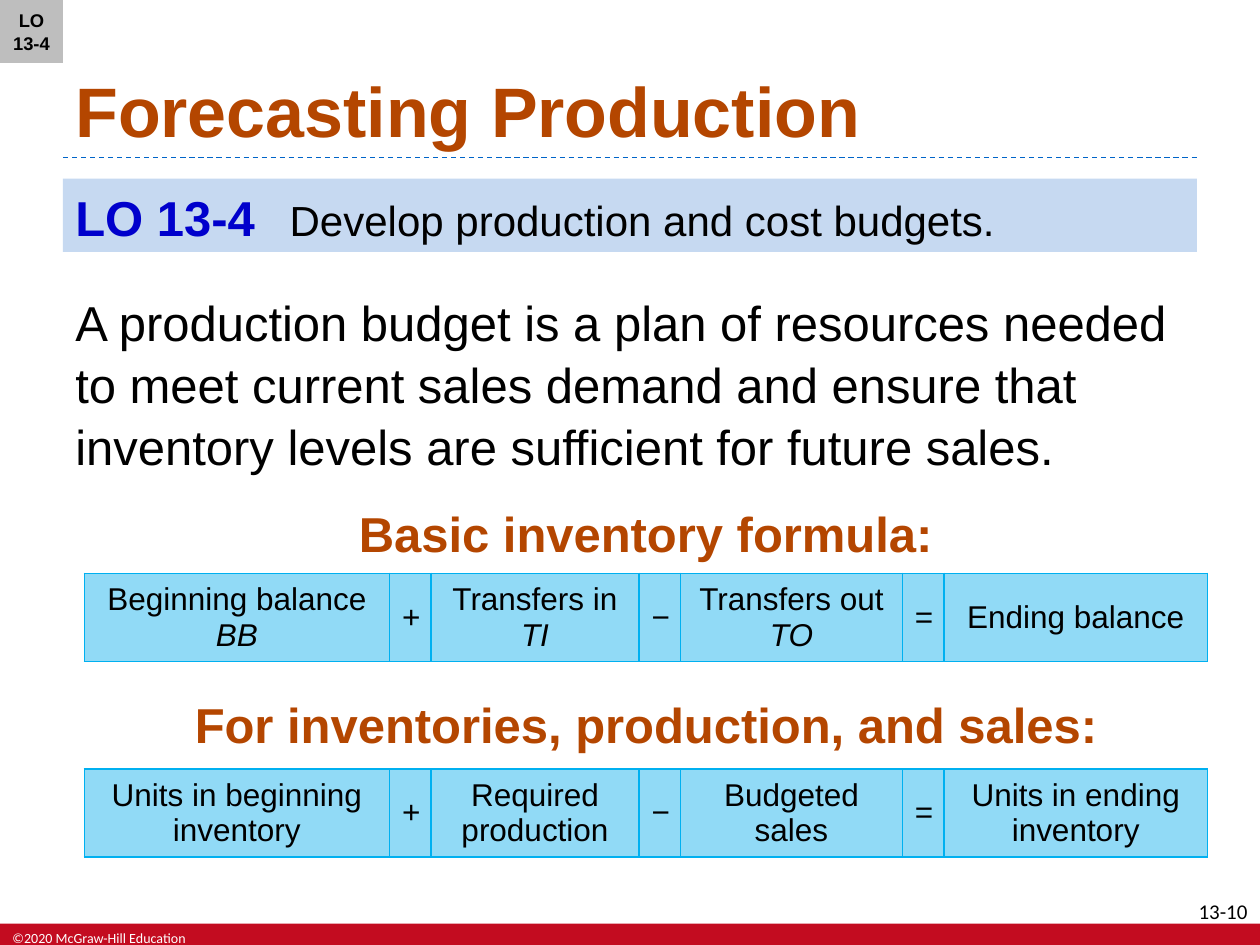
from lxml.etree import SubElement
from pptx import Presentation
from pptx.dml.color import RGBColor
from pptx.enum.dml import MSO_LINE
from pptx.enum.shapes import MSO_CONNECTOR, MSO_SHAPE
from pptx.enum.text import MSO_ANCHOR, PP_ALIGN
from pptx.oxml.ns import qn
from pptx.util import Cm, Pt

BLACK = RGBColor(0x00, 0x00, 0x00)
WHITE = RGBColor(0xFF, 0xFF, 0xFF)
RED = RGBColor(0xC3, 0x0C, 0x20)
RUST = RGBColor(0xB4, 0x46, 0x00)
BLUE = RGBColor(0x00, 0x00, 0xCC)
RULE_BLUE = RGBColor(0x00, 0x64, 0xC8)
PALE_BLUE = RGBColor(0xC6, 0xD9, 0xF1)
SKY = RGBColor(0x91, 0xDA, 0xF6)
BORDER = RGBColor(0x00, 0xB0, 0xF0)
GREY = RGBColor(0xBE, 0xBE, 0xBE)

COLUMN_WIDTHS = (6.15, 0.84, 4.19, 0.84, 4.47, 0.84, 5.31)
ROW_HEIGHT = 1.68
INVENTORY_FORMULA = (
    "Beginning balance\nBB", "+", "Transfers in\nTI", "−",
    "Transfers out\nTO", "=", "Ending balance",
)
PRODUCTION_FORMULA = (
    "Units in beginning inventory", "+", "Required production", "−",
    "Budgeted sales", "=", "Units in ending inventory",
)


def add_text(frame, text, size=28, color=BLACK, font="Arial", bold=False, italic=False,
             align=PP_ALIGN.LEFT, spacing=1.0, same_line=False):
    """Add text to a frame, in a new paragraph unless the last one is empty or continued."""
    paragraph = frame.paragraphs[-1]
    if paragraph.runs and not same_line:
        paragraph = frame.add_paragraph()
    paragraph.alignment = align
    paragraph.line_spacing = spacing
    run = paragraph.add_run()
    run.text = text
    run.font.name = font
    run.font.size = Pt(size)
    run.font.bold = bold
    run.font.italic = italic
    run.font.color.rgb = color
    return paragraph


def add_frame(slide, left, top, width, height, anchor=MSO_ANCHOR.TOP):
    """Add a wrapping text box and return its text frame."""
    box = slide.shapes.add_textbox(Cm(left), Cm(top), Cm(width), Cm(height))
    box.text_frame.word_wrap = True
    box.text_frame.vertical_anchor = anchor
    return box.text_frame


def add_panel(slide, left, top, width, height, fill, anchor=MSO_ANCHOR.TOP):
    """Add a plain filled rectangle and return its text frame."""
    panel = slide.shapes.add_shape(
        MSO_SHAPE.RECTANGLE, Cm(left), Cm(top), Cm(width), Cm(height))
    panel.shadow.inherit = False
    panel.fill.solid()
    panel.fill.fore_color.rgb = fill
    panel.line.fill.background()
    panel.text_frame.word_wrap = True
    panel.text_frame.vertical_anchor = anchor
    return panel.text_frame


def add_footer(slide, left, top, width, height):
    """Add the red band with the copyright line and the page number above it."""
    add_panel(slide, left, top, width, height, RED)
    copyright_frame = add_frame(slide, left, top, 4.06, height)
    add_text(copyright_frame, "©2020 McGraw-Hill Education", size=8, color=WHITE,
             font="Calibri")
    number_frame = add_frame(slide, left + width - 1.78, top - 0.63, 1.78, 0.5)
    add_text(number_frame, "13-10", size=12, font="Calibri", align=PP_ALIGN.RIGHT)


def add_title(slide, left, top, width, height):
    """Add the title with the dashed rule along its bottom edge."""
    bottom = Cm(top + height)
    rule = slide.shapes.add_connector(
        MSO_CONNECTOR.STRAIGHT, Cm(left), bottom, Cm(left + width), bottom)
    rule.line.color.rgb = RULE_BLUE
    rule.line.width = Pt(0.75)
    rule.line.dash_style = MSO_LINE.DASH
    SubElement(rule._element.spPr, qn("a:effectLst"))
    frame = add_frame(slide, left, top, width, height, MSO_ANCHOR.BOTTOM)
    add_text(frame, "Forecasting Production", size=40, color=RUST, bold=True)


def add_objective(slide, left, top, width, height):
    """Add the learning objective with its label in a hanging indent."""
    frame = add_panel(slide, left, top, width, height, PALE_BLUE)
    properties = frame.paragraphs[0]._p.get_or_add_pPr()
    indent = Cm(4.32)
    properties.set("marL", str(indent))
    properties.set("indent", str(-indent))
    add_text(frame, "LO 13-4\t", color=BLUE, bold=True, spacing=1.05)
    add_text(frame, "Develop production and cost budgets.", size=24, spacing=1.05,
             same_line=True)


def add_heading(slide, left, top, width, height, text):
    """Add a centred formula heading."""
    frame = add_frame(slide, left, top, width, height)
    add_text(frame, text, color=RUST, bold=True, align=PP_ALIGN.CENTER, spacing=1.05)


def style_cell(cell):
    """Give a cell its borders, fill and anchor."""
    properties = cell._tc.get_or_add_tcPr()
    for side in ("lnL", "lnR", "lnT", "lnB"):
        line = SubElement(properties, qn(f"a:{side}"), w=str(Pt(1)))
        fill = SubElement(line, qn("a:solidFill"))
        SubElement(fill, qn("a:srgbClr"), val=str(BORDER))
    cell.fill.solid()
    cell.fill.fore_color.rgb = SKY
    cell.vertical_anchor = MSO_ANCHOR.MIDDLE


def add_formula(slide, left, top, terms):
    """Add a one-row table of terms and operators, with symbols in italics."""
    table = slide.shapes.add_table(
        1, len(terms), Cm(left), Cm(top), Cm(sum(COLUMN_WIDTHS)), Cm(ROW_HEIGHT)).table
    table.first_row = False
    table.horz_banding = False
    for column, width in zip(table.columns, COLUMN_WIDTHS):
        column.width = Cm(width)
    for cell, term in zip(table.rows[0].cells, terms):
        style_cell(cell)
        for index, line in enumerate(term.split("\n")):
            add_text(cell.text_frame, line, size=18, italic=index > 0,
                     align=PP_ALIGN.CENTER)


def add_corner_tag(slide, left, top, side):
    """Add the square objective tag in the corner."""
    frame = add_panel(slide, left, top, side, side, GREY, MSO_ANCHOR.MIDDLE)
    frame.margin_left = frame.margin_right = Cm(0.13)
    add_text(frame, "LO 13-4", size=10.5, bold=True, align=PP_ALIGN.CENTER, spacing=1.05)


def main():
    """Build and save the slide."""
    presentation = Presentation()
    presentation.slide_width = Cm(25.4)
    presentation.slide_height = Cm(19.05)
    slide = presentation.slides.add_slide(presentation.slide_layouts[6])
    add_footer(slide, 0, 18.62, 25.4, 0.43)
    add_title(slide, 1.27, 0.13, 22.86, 3.05)
    add_objective(slide, 1.27, 3.6, 22.86, 1.48)
    add_text(
        add_frame(slide, 1.27, 5.72, 22.86, 3.81),
        "A production budget is a plan of resources needed to meet current sales demand "
        "and ensure that inventory levels are sufficient for future sales.",
        spacing=1.05)
    add_heading(slide, 6.88, 9.96, 12.27, 1.35, "Basic inventory formula:")
    add_formula(slide, 1.7, 11.56, INVENTORY_FORMULA)
    add_heading(slide, 3.5, 13.82, 19.05, 1.42, "For inventories, production, and sales:")
    add_formula(slide, 1.7, 15.5, PRODUCTION_FORMULA)
    add_corner_tag(slide, 0, 0, 1.27)
    presentation.save("out.pptx")


if __name__ == "__main__":
    main()
